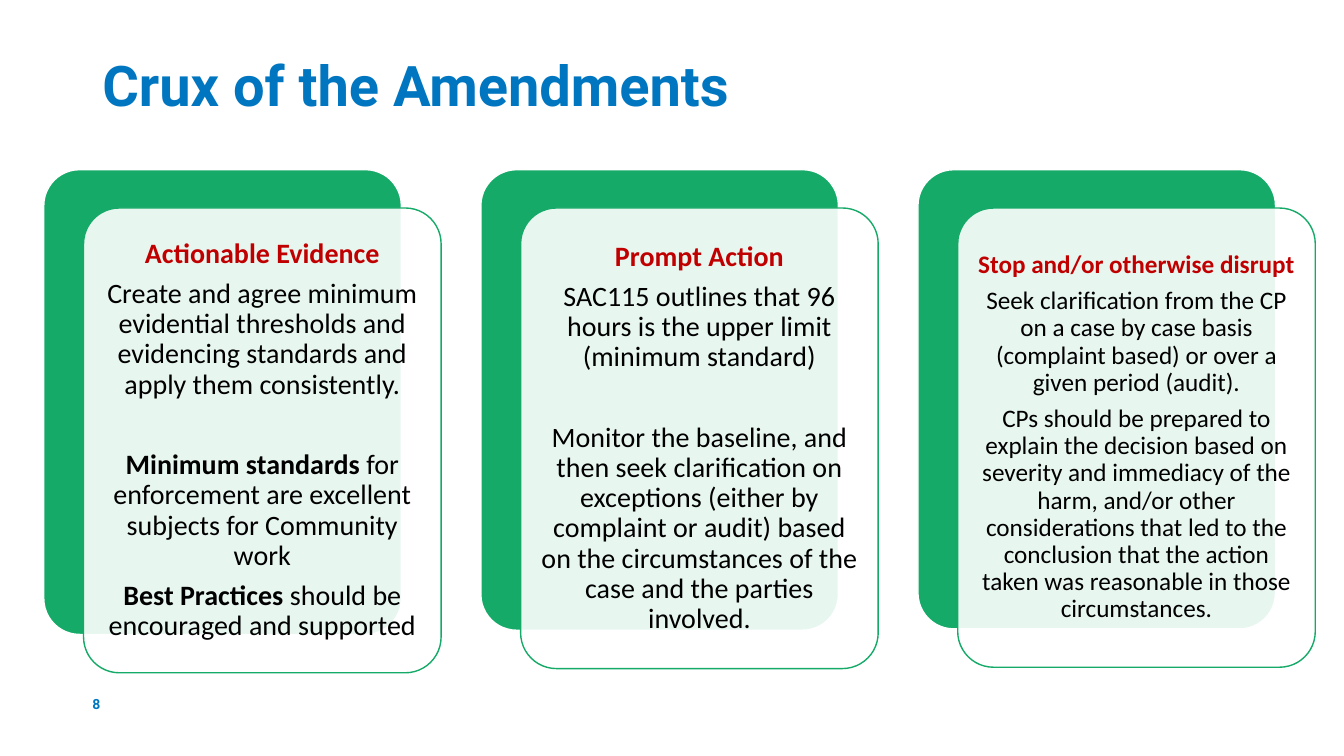
from lxml.etree import SubElement
from pptx import Presentation
from pptx.dml.color import RGBColor as RGB
from pptx.enum.shapes import MSO_SHAPE as Shape
from pptx.enum.text import MSO_ANCHOR as Anchor, PP_ALIGN as Align
from pptx.oxml.ns import qn
from pptx.util import Pt

COLORS = {"blue": "0076C0", "green": "15AA68", "red": "C00000",
          "white": "FFFFFF", "black": "000000"}

CARDS = [
    {"high": 332, "size": 20, "inset": 6, "paras": [
        [("Actionable Evidence", True)],
        [("Create and agree minimum evidential thresholds and evidencing "
          "standards and apply them consistently.", False)],
        [("Minimum standards ", True),
         ("for enforcement are excellent subjects for Community work", False)],
        [("Best Practices ", True),
         ("should be encouraged and supported", False)]]},
    {"high": 329, "size": 20, "inset": 6, "paras": [
        [("Prompt Action", True)],
        [("SAC115 outlines that 96 hours is the upper limit "
          "(minimum standard)", False)],
        [("Monitor the baseline, and then seek clarification on exceptions "
          "(either by complaint or audit) based on the circumstances of the "
          "case and the parties involved.", False)]]},
    {"high": 328, "size": 18, "inset": 5, "paras": [
        [("Stop and/or otherwise disrupt", True)],
        [("Seek clarification from the CP on a case by case basis "
          "(complaint based) or over a given period (audit).", False)],
        [("CPs should be prepared to explain the decision based on severity "
          "and immediacy of the harm, and/or other considerations that led "
          "to the conclusion that the action taken was reasonable in those "
          "circumstances.", False)]]},
]


def tint(name):
    return RGB.from_string(COLORS[name])


def write(para, text, size=20, font="Calibri", color="black", bold=False):
    run = para.add_run()
    run.text = text
    run.font.size = Pt(size)
    run.font.name = font
    run.font.bold = bold
    run.font.color.rgb = tint(color)


def setup(frame, anchor, insets):
    frame.word_wrap = True
    frame.vertical_anchor = anchor
    left, top, right, bottom = insets
    frame.margin_left, frame.margin_top = Pt(left), Pt(top)
    frame.margin_right, frame.margin_bottom = Pt(right), Pt(bottom)


def label(slide, box, text, anchor, insets, **style):
    frame = slide.shapes.add_textbox(*map(Pt, box)).text_frame
    setup(frame, anchor, insets)
    para = frame.paragraphs[0]
    para.line_spacing = 0.9
    write(para, text, font="Roboto", color="blue", bold=True, **style)


def panel(slide, box, fill, line, alpha=100):
    shape = slide.shapes.add_shape(Shape.ROUNDED_RECTANGLE, *map(Pt, box))
    shape.adjustments[0] = 0.1
    shape.shadow.inherit = False
    shape.fill.solid()
    shape.fill.fore_color.rgb = tint(fill)
    shape.line.color.rgb = tint(line)
    shape.line.width = Pt(1)
    if alpha < 100:
        color = shape.fill._xPr.find(qn("a:solidFill"))[0]
        SubElement(color, qn("a:alpha")).set("val", str(alpha * 1000))
    return shape


def card(slide, box, paras, size, inset):
    left, top, wide, high = box
    panel(slide, box, "green", "white")
    front = panel(slide, (left + 28.4, top + 27.4, wide, high),
                  "white", "green", alpha=90)
    frame = front.text_frame
    setup(frame, Anchor.MIDDLE, [inset] * 4)
    for i, parts in enumerate(paras):
        para = frame.add_paragraph() if i else frame.paragraphs[0]
        para.alignment = Align.CENTER
        para.line_spacing = 0.9
        wide_gap = i == 1 and size == 20
        para.space_after = Pt(36 if wide_gap else size * 0.35)
        for text, bold in parts:
            write(para, text, size=size, bold=bold,
                  color="black" if i else "red")


def build():
    deck = Presentation()
    deck.slide_width, deck.slide_height = Pt(960), Pt(540)
    slide = deck.slides.add_slide(deck.slide_layouts[6])
    label(slide, (66, 29, 849, 59), "Crux of the Amendments",
          Anchor.BOTTOM, (7.2, 3.6, 7.2, 3.6), size=40)
    label(slide, (66, 495, 216, 17), "8",
          Anchor.MIDDLE, (0, 3.6, 7.2, 3.6), size=10)
    for i, item in enumerate(CARDS):
        card(slide, (31.3 + 312.2 * i, 121.2, 255.4, item["high"]),
             item["paras"], item["size"], item["inset"])
    deck.save("out.pptx")


if __name__ == "__main__":
    build()
